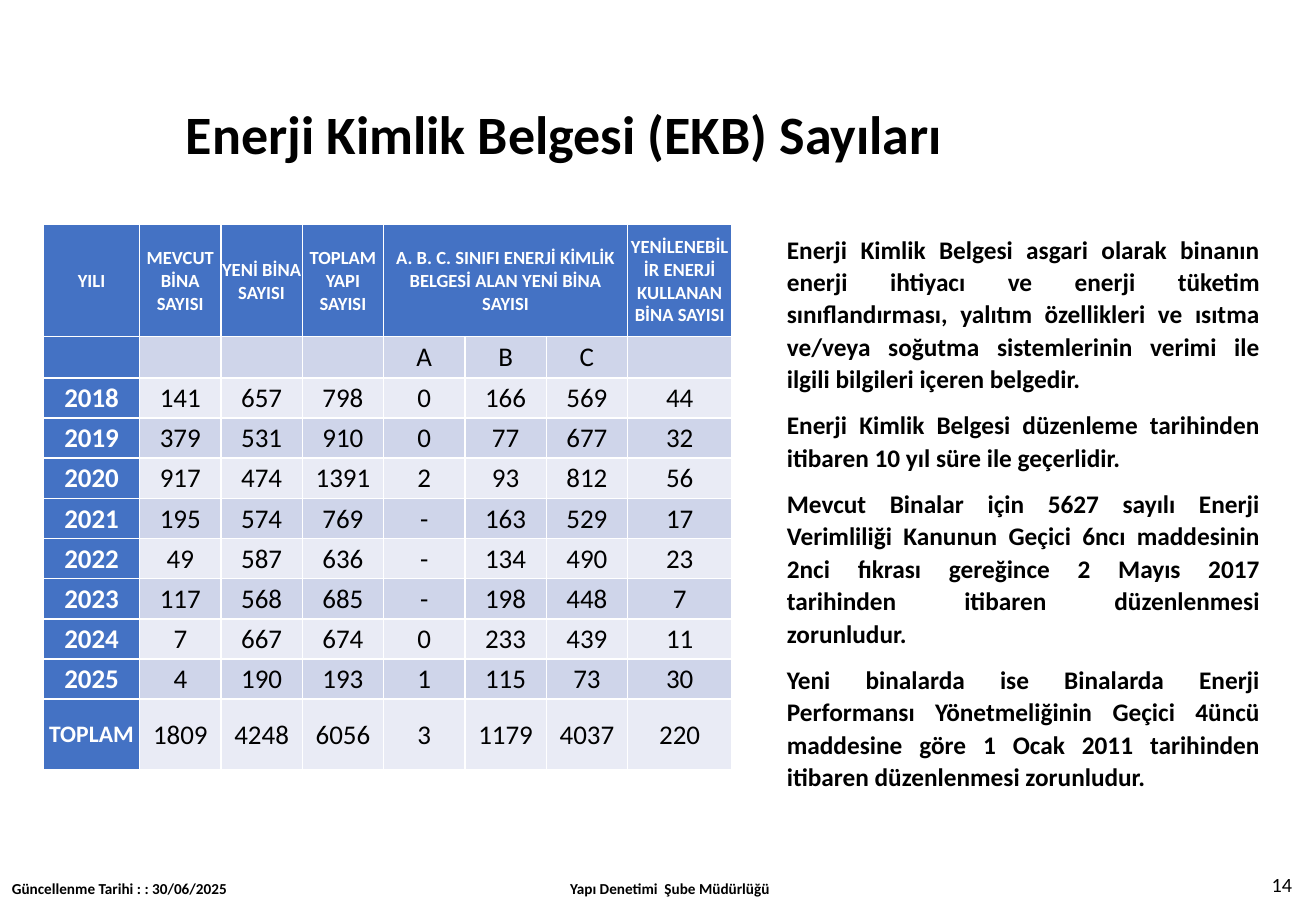
from pptx import Presentation
from pptx import util as u
from pptx.dml.color import RGBColor
from pptx.enum import text

COLORS = {
    "ink": "000000",
    "white": "FFFFFF",
    "header": "4472C4",
    "band_dark": "CFD5EA",
    "band_light": "E9EBF5",
}
ALIGN = text.PP_ALIGN
ANCHOR = text.MSO_ANCHOR

HEADINGS = [
    "YILI", "MEVCUT BİNA SAYISI", "YENİ BİNA SAYISI", "TOPLAM YAPI SAYISI",
    "A. B. C. SINIFI ENERJİ KİMLİK BELGESİ ALAN YENİ BİNA SAYISI", "", "",
    "YENİLENEBİLİR ENERJİ KULLANAN BİNA SAYISI",
]
COUNTS = [
    ["", "", "", "", "A", "B", "C", ""],
    ["2018", "141", "657", "798", "0", "166", "569", "44"],
    ["2019", "379", "531", "910", "0", "77", "677", "32"],
    ["2020", "917", "474", "1391", "2", "93", "812", "56"],
    ["2021", "195", "574", "769", "-", "163", "529", "17"],
    ["2022", "49", "587", "636", "-", "134", "490", "23"],
    ["2023", "117", "568", "685", "-", "198", "448", "7"],
    ["2024", "7", "667", "674", "0", "233", "439", "11"],
    ["2025", "4", "190", "193", "1", "115", "73", "30"],
    ["TOPLAM", "1809", "4248", "6056", "3", "1179", "4037", "220"],
]
COLUMN_WIDTHS = [2.01] + [1.7] * 6 + [2.18]
ROW_HEIGHTS = [2.34, 0.86] + [0.84] * 8 + [1.47]
EXPLANATION = [
    "Enerji Kimlik Belgesi asgari olarak binanın enerji ihtiyacı ve enerji tüketim "
    "sınıflandırması, yalıtım özellikleri ve ısıtma ve/veya soğutma sistemlerinin "
    "verimi ile ilgili bilgileri içeren belgedir.",
    "Enerji Kimlik Belgesi düzenleme tarihinden itibaren 10 yıl süre ile geçerlidir.",
    "Mevcut Binalar için 5627 sayılı Enerji Verimliliği Kanunun Geçici 6ncı maddesinin "
    "2nci fıkrası gereğince 2 Mayıs 2017 tarihinden itibaren düzenlenmesi zorunludur.",
    "Yeni binalarda ise Binalarda Enerji Performansı Yönetmeliğinin Geçici 4üncü "
    "maddesine göre 1 Ocak 2011 tarihinden itibaren düzenlenmesi zorunludur.",
]


class EnergySlide:
    font = "Calibri"

    def __init__(self, deck):
        self.slide = deck.slides.add_slide(deck.slide_layouts[5])

    def fill_text(self, frame, lines, size, color="ink", bold=True, align=ALIGN.LEFT,
                  spacing=None, after=None):
        frame.text = "\n".join(lines)
        for paragraph in frame.paragraphs:
            paragraph.alignment = align
            paragraph.line_spacing = spacing
            paragraph.space_after = after
            for run in paragraph.runs:
                run.font.name = self.font
                run.font.size = u.Pt(size)
                run.font.bold = bold
                run.font.color.rgb = RGBColor.from_string(COLORS[color])

    def title(self, wording, box, size):
        heading = self.slide.shapes.title
        heading.left, heading.top, heading.width, heading.height = map(u.Cm, box)
        heading.text_frame.auto_size = text.MSO_AUTO_SIZE.NONE
        heading.text_frame.vertical_anchor = ANCHOR.MIDDLE
        self.fill_text(heading.text_frame, [wording], size, spacing=0.9)

    def text_box(self, lines, box, size, anchor=ANCHOR.TOP, **style):
        frame = self.slide.shapes.add_textbox(*map(u.Cm, box)).text_frame
        frame.word_wrap = True
        frame.vertical_anchor = anchor
        self.fill_text(frame, lines, size, **style)

    def cell(self, cell, wording, fill, size, color, bold):
        cell.fill.solid()
        cell.fill.fore_color.rgb = RGBColor.from_string(COLORS[fill])
        cell.vertical_anchor = ANCHOR.MIDDLE
        cell.margin_left = cell.margin_right = cell.margin_top = u.Cm(0.02)
        cell.margin_bottom = 0
        self.fill_text(cell.text_frame, [wording], size, color, bold, ALIGN.CENTER)

    def table(self, rows, widths, heights, left, top):
        size = u.Cm(sum(widths)), u.Cm(sum(heights))
        grid = self.slide.shapes.add_table(
            len(rows), len(widths), u.Cm(left), u.Cm(top), *size).table
        grid.first_col = True
        for column, width in zip(grid.columns, widths):
            column.width = u.Cm(width)
        for row, height in zip(grid.rows, heights):
            row.height = u.Cm(height)
        for r, row in enumerate(rows):
            band = "band_dark" if r % 2 else "band_light"
            for c, wording in enumerate(row):
                heading = r == 0 or c == 0
                points = 11 if r == 0 else 14 if wording == "TOPLAM" else 16
                self.cell(grid.cell(r, c), wording, "header" if heading else band,
                          points, "white" if heading else "ink", heading)
        grid.cell(0, 4).merge(grid.cell(0, 6))


def main():
    deck = Presentation()
    deck.slide_width, deck.slide_height = u.Cm(27.51), u.Cm(19.05)
    page = EnergySlide(deck)
    page.text_box(EXPLANATION, (16.2, 4.72, 10.39, 11.38), 15,
                  align=ALIGN.JUSTIFY, spacing=1.07, after=u.Pt(8))
    page.text_box(["Yapı Denetimi  Şube Müdürlüğü"], (10.01, 18.26, 7.98, 0.64), 9,
                  align=ALIGN.CENTER)
    page.title("Enerji Kimlik Belgesi (EKB) Sayıları", (3.63, 1.02, 19.23, 3.68), 32)
    page.text_box(["14"], (21.06, 17.98, 6.2, 1.02), 12, ANCHOR.MIDDLE,
                  bold=False, align=ALIGN.RIGHT)
    page.text_box(["Güncellenme Tarihi : : 30/06/2025"], (0, 18.26, 5.08, 0.64), 9)
    page.table([HEADINGS] + COUNTS, COLUMN_WIDTHS, ROW_HEIGHTS, 0.91, 4.7)
    deck.save("out.pptx")


if __name__ == "__main__":
    main()
